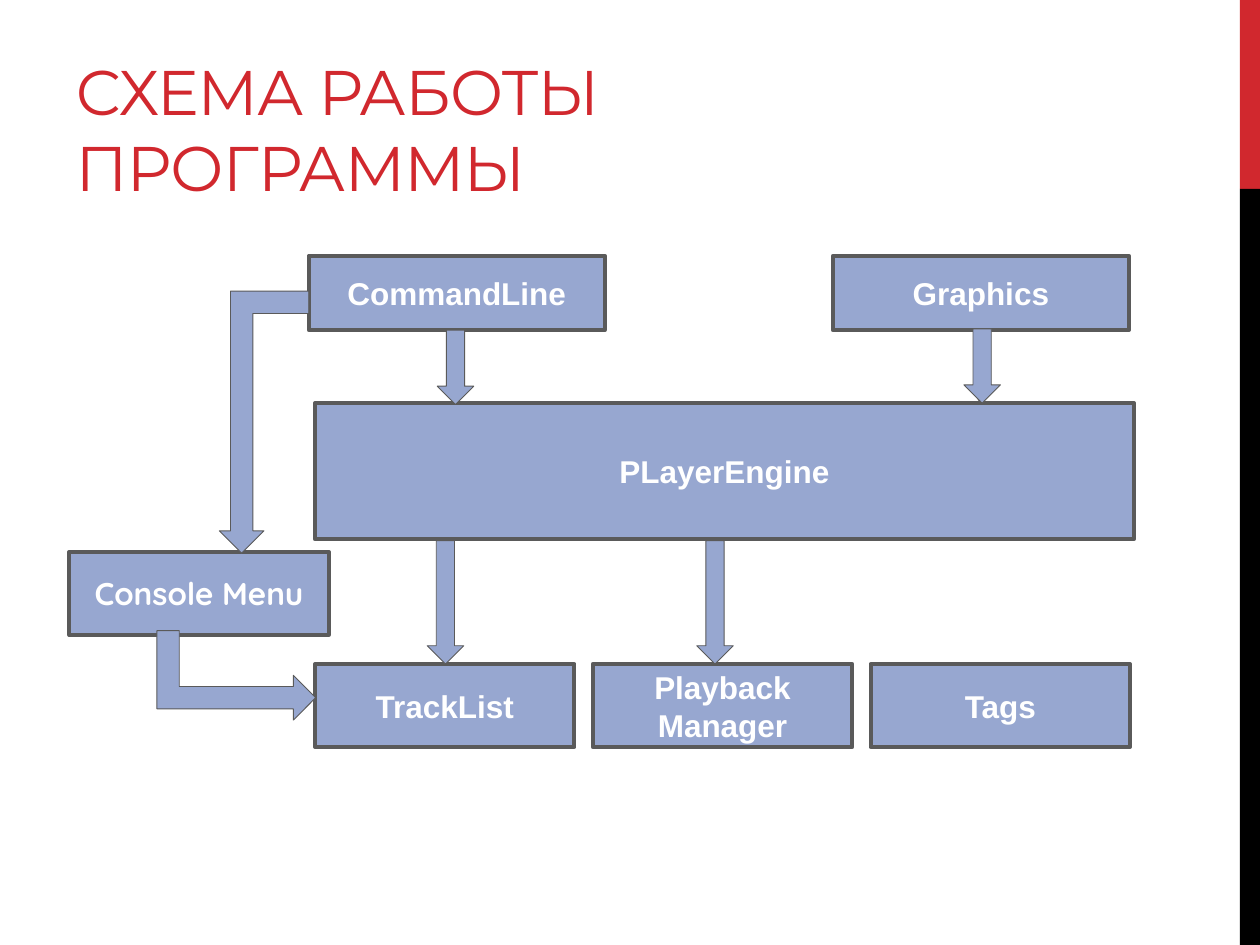
import pptx
import pptx.util
import pptx.dml.color
import pptx.enum.shapes
import pptx.enum.text
import pptx.oxml
import pptx.oxml.ns

Inches = pptx.util.Inches
Pt = pptx.util.Pt
SHAPE = pptx.enum.shapes.MSO_SHAPE
ALIGN = pptx.enum.text.PP_ALIGN
ANCHOR = pptx.enum.text.MSO_ANCHOR

RED = "D1282E"
BLUE = "97A7D0"
GRAY = "5A5A5A"
BOX_FONT = {"size": Pt(18), "name": "Arial", "bold": True}
TITLE_FONT = {"size": Pt(36), "name": "Montserrat", "bold": False}
ARROW_W = 0.29


def rgb(value):
    return pptx.dml.color.RGBColor.from_string(value)


def set_font(r, fmt, color):
    for key, value in fmt.items():
        setattr(r.font, key, value)
    r.font.color.rgb = rgb(color)


def add_shape(s, kind, x, y, w, h, fill=BLUE, line=GRAY, weight=0.5):
    sp = s.shapes.add_shape(kind, Inches(x), Inches(y), Inches(w), Inches(h))
    sp.shadow.inherit = False
    sp.fill.solid()
    sp.fill.fore_color.rgb = rgb(fill)
    if line:
        sp.line.color.rgb = rgb(line)
        sp.line.width = Pt(weight)
    else:
        sp.line.fill.background()
    return sp


def add_box(s, lines, x, y, w, h, font="Arial"):
    sp = add_shape(s, SHAPE.RECTANGLE, x, y, w, h, weight=2.25)
    tf = sp.text_frame
    tf.word_wrap = True
    tf.vertical_anchor = ANCHOR.MIDDLE
    for i, text in enumerate(lines):
        p = tf.add_paragraph() if i else tf.paragraphs[0]
        p.alignment = ALIGN.CENTER
        r = p.add_run()
        r.text = text
        set_font(r, {**BOX_FONT, "name": font}, "FFFFFF")


def add_line(s, x1, y1, x2, y2):
    c = s.shapes.add_connector(pptx.enum.shapes.MSO_CONNECTOR.STRAIGHT,
                               Inches(x1), Inches(y1), Inches(x2), Inches(y2))
    c.line.color.rgb = rgb("777777")
    c.line.width = Pt(1)
    ln = c.line._get_or_add_ln()
    tail = pptx.oxml.ns.qn("a:tailEnd")
    ln.append(ln.makeelement(tail, {"type": "arrow"}))
    effects = pptx.oxml.ns.qn("a:effectLst")
    c._element.spPr.append(ln.makeelement(effects, {}))


def add_bent_arrow(s, x, y, w, h, rotation):
    sp = add_shape(s, SHAPE.BENT_UP_ARROW, x, y, w, h)
    sp.rotation = rotation


def add_title(s, text):
    sp = s.shapes.title
    place = {"left": 0.5, "top": 0.17, "width": 6.33, "height": 1.5}
    for key, value in place.items():
        setattr(sp, key, Inches(value))
    tf = sp.text_frame
    tf.word_wrap = True
    tf.auto_size = pptx.enum.text.MSO_AUTO_SIZE.NONE
    tf.vertical_anchor = ANCHOR.BOTTOM
    p = tf.paragraphs[0]
    p.alignment = ALIGN.LEFT
    r = p.add_run()
    r.text = text
    set_font(r, TITLE_FONT, RED)
    r._r.get_or_add_rPr().set("spc", "-60")


def main():
    prs = pptx.Presentation()
    prs.slide_width = Inches(10)
    prs.slide_height = Inches(7.5)
    s = prs.slides.add_slide(prs.slide_layouts[5])

    for y, h, color in ((0, 1.5, RED), (1.5, 6, "000000")):
        add_shape(s, SHAPE.RECTANGLE, 9.84, y, 0.16, h, fill=color, line=None)

    for ends in ((3.53, 4.27, 3.53, 5.27), (3.62, 2.63, 3.62, 3.22),
                 (7.78, 2.57, 7.77, 3.19), (5.68, 4.27, 5.68, 5.27)):
        add_line(s, *ends)

    add_box(s, ["PLayerEngine"], 2.5, 3.2, 6.5, 1.08)
    for x, name in ((2.45, "CommandLine"), (6.61, "Graphics")):
        add_box(s, [name], x, 2.03, 2.35, 0.59)
    modules = (["TrackList"], ["Playback", "Manager"], ["Tags"])
    for i, lines in enumerate(modules):
        add_box(s, lines, 2.5 + i * 2.205, 5.27, 2.06, 0.66)
    add_box(s, ["Console Menu"], 0.55, 4.38, 2.06, 0.66, font="Quicksand")

    for x, y, h in ((3.47, 2.62, 0.59), (7.65, 2.61, 0.59),
                    (3.39, 4.29, 0.98), (5.53, 4.29, 0.98)):
        add_shape(s, SHAPE.DOWN_ARROW, x, y, ARROW_W, h)
    add_bent_arrow(s, 1.52, 4.73, 0.71, 1.26, 90)
    add_bent_arrow(s, 1.74, 2.31, 0.71, 2.08, 180)

    add_title(s, "СХЕМА РАБОТЫ ПРОГРАММЫ")
    prs.save("out.pptx")


if __name__ == "__main__":
    main()
